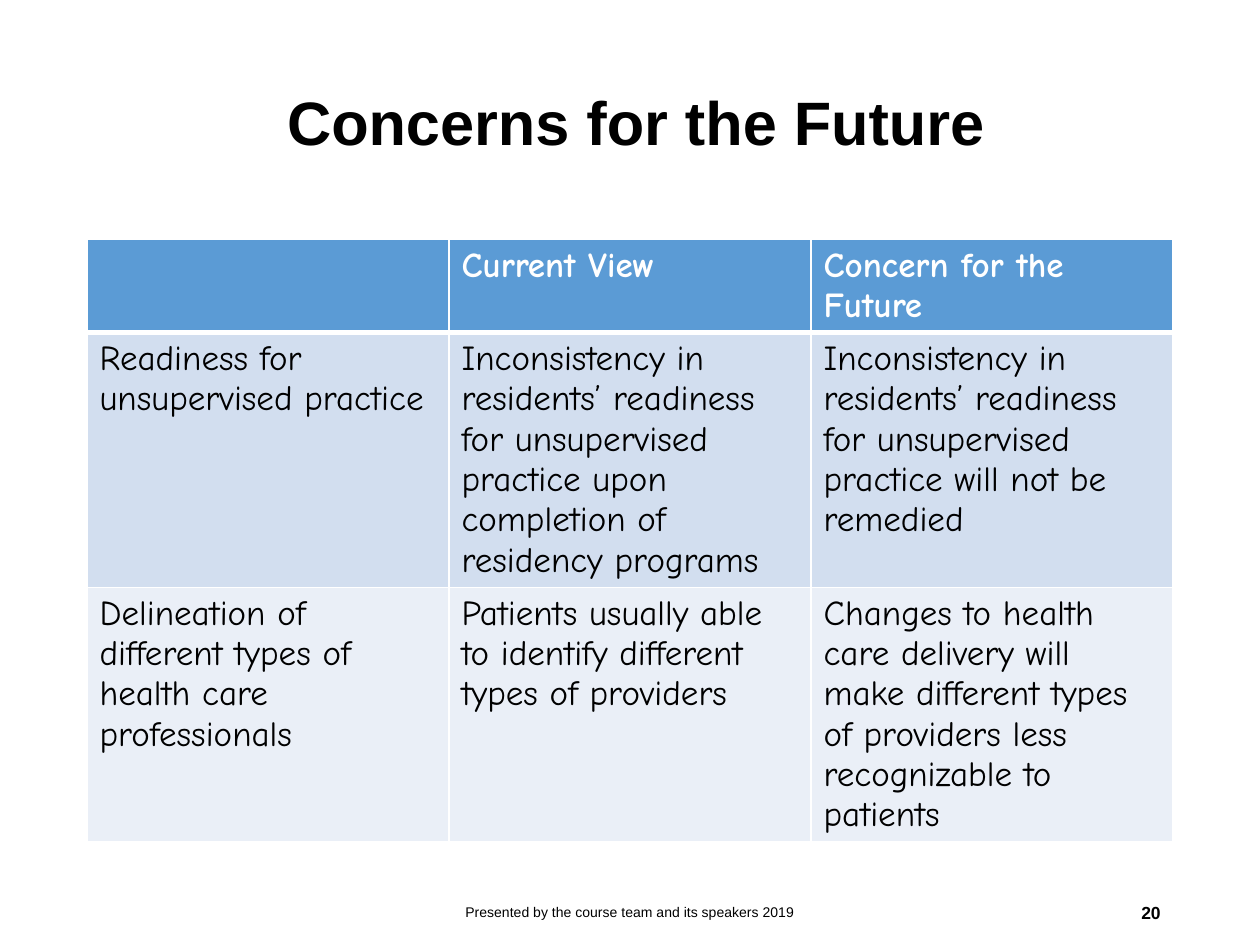
from pptx import Presentation
from pptx.dml.color import RGBColor
from pptx.enum.text import MSO_ANCHOR, PP_ALIGN
from pptx.oxml import parse_xml
from pptx.oxml.ns import nsdecls
from pptx.util import Inches, Pt

COLORS = {
    "ink": "000000",
    "white": "FFFFFF",
    "head": "5B9BD5",
    "odd": "D2DEEF",
    "even": "EAEFF7",
}
ROWS = [
    ["", "Current View", "Concern for the Future"],
    [
        "Readiness for unsupervised practice",
        "Inconsistency in residents’ readiness for unsupervised practice "
        "upon completion of residency programs",
        "Inconsistency in residents’ readiness for unsupervised practice "
        "will not be remedied",
    ],
    [
        "Delineation of different types of health care professionals",
        "Patients usually able to identify different types of providers",
        "Changes to health care delivery will make different types of "
        "providers less recognizable to patients",
    ],
]
FILLS = ["head", "odd", "even"]
HEIGHTS = [0.74, 2.02, 2.02]


class Page:
    """Holds the fonts and the slide being filled."""

    sans = "Arial"
    hand = "Comic Neue"

    def __init__(self, slide):
        self.slide = slide

    def style(self, para, face, size, color, bold=False):
        font = para.font
        font.name, font.size, font.bold = face, Pt(size), bold
        font.color.rgb = RGBColor.from_string(COLORS[color])

    def text(self, words, box, size, align=PP_ALIGN.LEFT, bold=False, line=1.0):
        shape = self.slide.shapes.add_textbox(*map(Inches, box))
        frame = shape.text_frame
        frame.word_wrap = True
        frame.vertical_anchor = MSO_ANCHOR.MIDDLE
        para = frame.paragraphs[0]
        para.text = words
        para.alignment = align
        para.line_spacing = line
        self.style(para, self.sans, size, "ink", bold)

    def border(self, cell, side, width):
        cell._tc.get_or_add_tcPr().append(parse_xml(
            f'<a:ln{side} {nsdecls("a")} w="{Pt(width)}"><a:solidFill>'
            f'<a:srgbClr val="{COLORS["white"]}"/></a:solidFill></a:ln{side}>'))

    def cell(self, cell, words, row):
        head = row == 0
        widths = {"L": 1, "R": 1, "T": 3 if row == 1 else 1, "B": 3 if head else 1}
        for side, width in widths.items():
            self.border(cell, side, width)
        cell.fill.solid()
        cell.fill.fore_color.rgb = RGBColor.from_string(COLORS[FILLS[row]])
        cell.text = words
        color = "white" if head else "ink"
        self.style(cell.text_frame.paragraphs[0], self.hand, 20, color, head)

    def table(self, rows, left, top, width):
        box = map(Inches, (left, top, width, sum(HEIGHTS)))
        table = self.slide.shapes.add_table(len(rows), len(rows[0]), *box).table
        for i, row in enumerate(rows):
            table.rows[i].height = Inches(HEIGHTS[i])
            for j, words in enumerate(row):
                self.cell(table.cell(i, j), words, i)


def main():
    deck = Presentation()
    deck.slide_width, deck.slide_height = Inches(10), Inches(7.5)
    page = Page(deck.slides.add_slide(deck.slide_layouts[6]))
    page.table(ROWS, 0.69, 1.9, 8.62)
    page.text("Concerns for the Future", (2.18, 0.27, 7.14, 1.45), 35,
              bold=True, line=0.9)
    page.text("Presented by the course team and its speakers 2019",
              (3.31, 7.04, 3.38, 0.4), 8, PP_ALIGN.CENTER)
    page.text("20", (7.06, 7.04, 2.25, 0.4), 10, PP_ALIGN.RIGHT, bold=True)
    deck.save("out.pptx")


if __name__ == "__main__":
    main()
